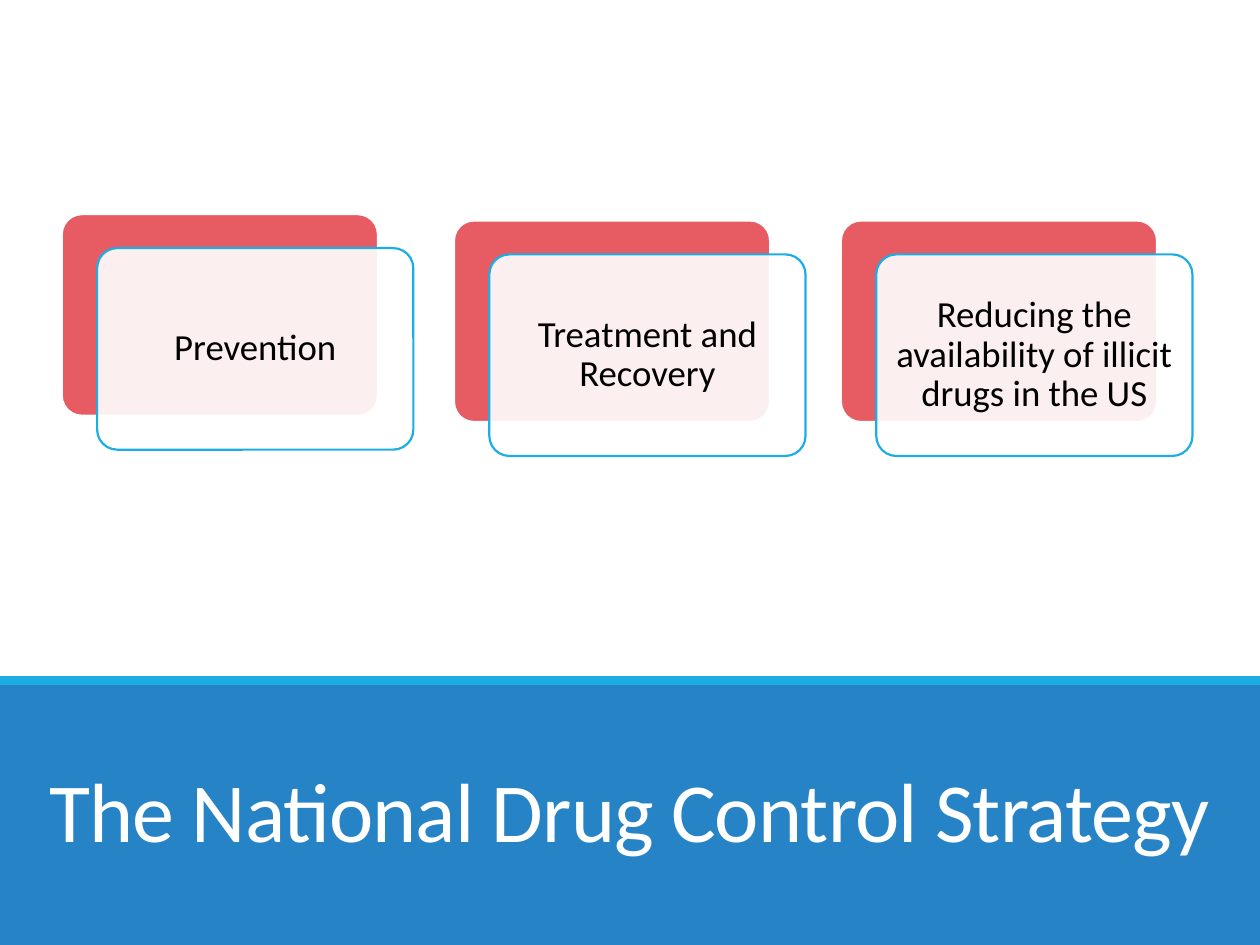
"""Build the National Drug Control Strategy slide with three layered cards."""
from dataclasses import dataclass

from lxml import etree
from pptx import Presentation
from pptx.dml.color import RGBColor
from pptx.enum import shapes, text
from pptx.oxml import ns
from pptx.util import Pt

FONT = "Calibri"
WHITE, BLACK = "FFFFFF", "000000"
BLUE, CYAN, RED = "2683C6", "1CADE4", "E75C63"
CARD_W, CARD_H = 180.7, 115.2
SHIFT_X, SHIFT_Y = 20.2, 19.4


@dataclass
class Card:
    label: str
    x: float
    y: float


CARDS = [
    Card("Prevention", 35.3, 122.4),
    Card("Treatment and Recovery", 259.4, 126),
    Card("Reducing the availability of illicit drugs in the US", 480.5, 126),
]


def rgb(value: str) -> RGBColor:
    return RGBColor.from_string(value)


def add_box(s, kind, x: float, y: float, w: float, h: float, fill: str, line: str = ""):
    sp = s.shapes.add_shape(kind, Pt(x), Pt(y), Pt(w), Pt(h))
    sp.shadow.inherit = False
    sp.fill.solid()
    sp.fill.fore_color.rgb = rgb(fill)
    if line:
        sp.line.color.rgb = rgb(line)
        sp.line.width = Pt(1.25)
    else:
        sp.line.fill.background()
    return sp


def add_panel(s, x: float, y: float, fill: str, line: str):
    sp = add_box(s, shapes.MSO_SHAPE.ROUNDED_RECTANGLE, x, y, CARD_W, CARD_H, fill, line)
    sp.adjustments[0] = 0.1
    return sp


def write(sp, words: str, size: float, color: str, spacing: float, anchor):
    tf = sp.text_frame
    tf.word_wrap = True
    tf.auto_size = text.MSO_AUTO_SIZE.NONE
    tf.vertical_anchor = anchor
    p = tf.paragraphs[0]
    p.alignment = text.PP_ALIGN.CENTER
    p.line_spacing = spacing
    r = p.add_run()
    r.text = words
    r.font.name = FONT
    r.font.size = Pt(size)
    r.font.color.rgb = rgb(color)
    return r


def set_opacity(sp, percent: int) -> None:
    color = sp.element.spPr.find(ns.qn("a:solidFill"))[0]
    etree.SubElement(color, ns.qn("a:alpha")).set("val", str(percent * 1000))


def add_card(s, card: Card) -> None:
    add_panel(s, card.x, card.y, RED, WHITE)
    sp = add_panel(s, card.x + SHIFT_X, card.y + SHIFT_Y, WHITE, CYAN)
    set_opacity(sp, 90)
    tf = sp.text_frame
    tf.margin_left = tf.margin_right = tf.margin_top = tf.margin_bottom = Pt(6.3)
    write(sp, card.label, 21, BLACK, 0.9, text.MSO_ANCHOR.MIDDLE)


def add_title(s, words: str) -> None:
    sp = s.shapes.title
    sp.left, sp.top, sp.width, sp.height = Pt(15.8), Pt(413.3), Pt(687.6), Pt(81.4)
    r = write(sp, words, 48, WHITE, 0.85, text.MSO_ANCHOR.BOTTOM)
    r.font._element.set("spc", "-50")
    sp.element.getparent().append(sp.element)


def main() -> None:
    prs = Presentation()
    prs.slide_width, prs.slide_height = Pt(720), Pt(540)
    s = prs.slides.add_slide(prs.slide_layouts[5])
    add_box(s, shapes.MSO_SHAPE.RECTANGLE, 0, 390, 720, 150, BLUE)
    add_box(s, shapes.MSO_SHAPE.RECTANGLE, 0, 386.4, 720, 5, CYAN)
    add_title(s, "The National Drug Control Strategy")
    for card in CARDS:
        add_card(s, card)
    prs.save("out.pptx")


if __name__ == "__main__":
    main()
